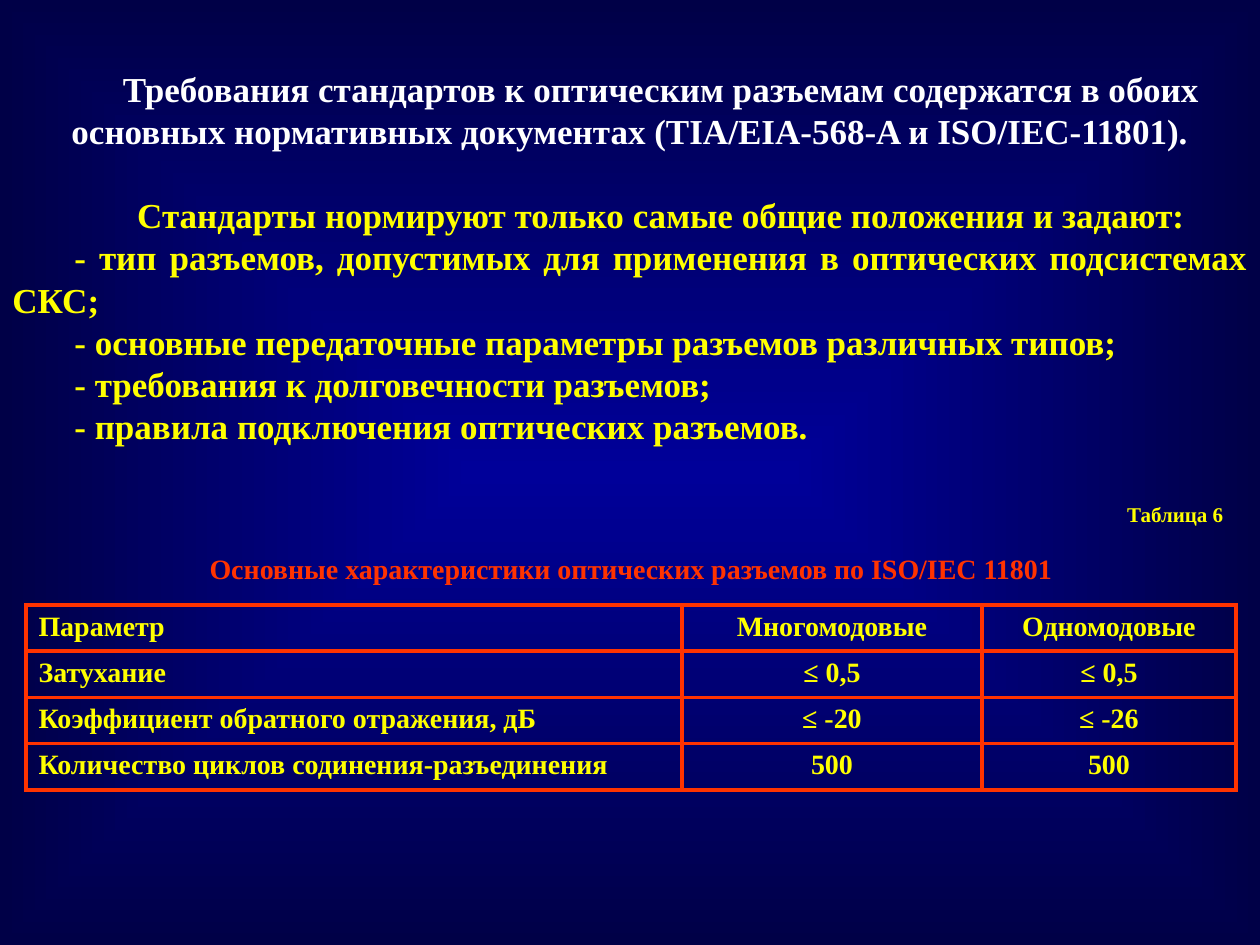
from lxml.etree import SubElement
from pptx import Presentation
from pptx.dml.color import RGBColor
from pptx.enum.text import MSO_ANCHOR, PP_ALIGN
from pptx.oxml.ns import qn
from pptx.util import Emu, Pt

COLORS = {
    "center": "000099",
    "edge": "000047",
    "white": "FFFFFF",
    "yellow": "FFFF00",
    "red": "FF3300",
}
EMU_PER_PX = 914400 / 126


def px(length):
    return Emu(round(length * EMU_PER_PX))


def write(paragraph, text, size, color, align):
    paragraph.alignment = align
    span = paragraph.add_run()
    span.text = text
    font_format = {"name": "Times New Roman", "size": Pt(size), "bold": True}
    for name, value in font_format.items():
        setattr(span.font, name, value)
    span.font.color.rgb = RGBColor.from_string(COLORS[color])


deck = Presentation()
deck.slide_width, deck.slide_height = px(1260), px(945)
page = deck.slides.add_slide(deck.slide_layouts[6])

# Background: gradient running from the centre to the edges
background = page.background.fill
background.gradient()
for stop, color, position in zip(background.gradient_stops, ("center", "edge"), (0, 1)):
    stop.color.rgb = RGBColor.from_string(COLORS[color])
    stop.position = position
gradient = page.element.find(".//" + qn("a:gradFill"))
gradient.remove(gradient.find(qn("a:lin")))
path_fill = SubElement(gradient, qn("a:path"), path="shape")
SubElement(path_fill, qn("a:fillToRect"), l="50000", t="50000", r="50000", b="50000")

# Requirements text
requirements = [
    ("Требования стандартов к оптическим разъемам содержатся в обоих основных "
     "нормативных документах (TIA/EIA-568-A и ISO/IEC-11801).", "white", PP_ALIGN.CENTER, 0),
    ("Стандарты нормируют только самые общие положения и задают:",
     "yellow", PP_ALIGN.CENTER, 24),
]
requirements += [(f"- {item}", "yellow", PP_ALIGN.JUSTIFY, 0) for item in (
    "тип разъемов, допустимых для применения в оптических подсистемах СКС;",
    "основные передаточные параметры разъемов различных типов;",
    "требования к долговечности разъемов;",
    "правила подключения оптических разъемов.",
)]
box = page.shapes.add_textbox(px(0), px(62), px(1260), px(390))
frame = box.text_frame
frame.word_wrap = True
frame.vertical_anchor = MSO_ANCHOR.MIDDLE
for index, (text, color, align, gap) in enumerate(requirements):
    paragraph = frame.add_paragraph() if index else frame.paragraphs[0]
    write(paragraph, text, 20, color, align)
    paragraph.line_spacing = Pt(24)
    paragraph.space_before = Pt(gap)
    properties = paragraph._p.get_or_add_pPr()
    properties.set("marL", "0")
    properties.set("indent", str(px(62)))

# Table: two merged caption rows, then the header and the values
rows = [
    ["Таблица 6"],
    ["Основные характеристики оптических разъемов по ISO/IEC 11801"],
    ["Параметр", "Многомодовые", "Одномодовые"],
    ["Затухание", "≤ 0,5", "≤ 0,5"],
    ["Коэффициент обратного отражения, дБ", "≤ -20", "≤ -26"],
    ["Количество циклов содинения-разъединения", "500", "500"],
]
column_widths = [656, 300, 254]
row_heights = [38, 69, 46, 46, 46, 46]
table = page.shapes.add_table(
    len(rows), len(column_widths), px(26), px(498),
    px(sum(column_widths)), px(sum(row_heights))).table
table.first_row = False
table.horz_banding = False
for column, width in zip(table.columns, column_widths):
    column.width = px(width)
for row, height in zip(table.rows, row_heights):
    row.height = px(height)

# Borders: captions have only the line above the header
for row_index in range(len(rows)):
    for column_index in range(len(column_widths)):
        cell = table.cell(row_index, column_index)
        cell_properties = cell._tc.get_or_add_tcPr()
        for side in ("L", "R", "T", "B"):
            line = SubElement(cell_properties, qn(f"a:ln{side}"), w=str(Pt(2.25)))
            if row_index > 1 or (row_index == 1 and side == "B"):
                solid = SubElement(line, qn("a:solidFill"))
                SubElement(solid, qn("a:srgbClr"), val=COLORS["red"])
            else:
                SubElement(line, qn("a:noFill"))
        cell.fill.background()

# Cell text
caption_styles = [(12, "yellow", PP_ALIGN.RIGHT), (16, "red", PP_ALIGN.CENTER)]
for row_index, texts in enumerate(rows):
    if row_index < len(caption_styles):
        table.cell(row_index, 0).merge(table.cell(row_index, len(column_widths) - 1))
    for column_index, text in enumerate(texts):
        if row_index < len(caption_styles):
            style = caption_styles[row_index]
        else:
            style = (16, "yellow", PP_ALIGN.CENTER if column_index else PP_ALIGN.JUSTIFY)
        write(table.cell(row_index, column_index).text_frame.paragraphs[0], text, *style)
table.cell(1, 0).vertical_anchor = MSO_ANCHOR.MIDDLE

deck.save("out.pptx")
